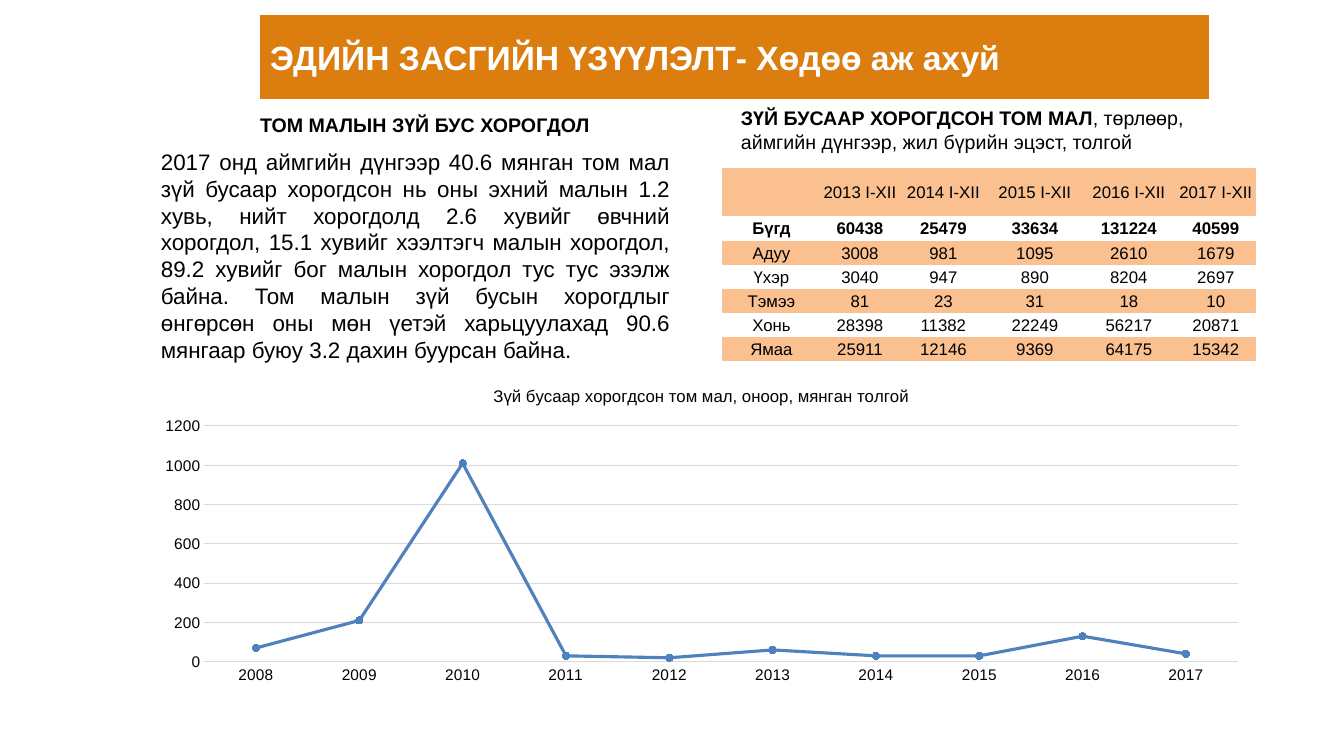
from dataclasses import dataclass

from lxml.etree import SubElement
from pptx import Presentation
from pptx.chart.data import CategoryChartData
from pptx.dml.color import RGBColor
from pptx.enum.chart import XL_CHART_TYPE, XL_MARKER_STYLE, XL_TICK_MARK
from pptx.enum.text import MSO_ANCHOR, MSO_AUTO_SIZE, PP_ALIGN
from pptx.oxml.ns import qn
from pptx.util import Emu, Pt


@dataclass(frozen=True)
class Theme:
    font: str = "Arial"
    text: str = "000000"
    white: str = "FFFFFF"
    banner: str = "DC7D0F"
    band: str = "FAC090"
    line: str = "4F81BD"
    grid: str = "D9D9D9"
    title_size: int = 24
    body_size: int = 16
    heading_size: int = 14
    table_size: int = 12
    axis_size: int = 11


def px(n):
    return Emu(round(n * 914400 / 100.8))


def rgb(value):
    return RGBColor.from_string(value)


class SlideBuilder:
    NO_STYLE = "{2D5ABB26-0587-4C30-8999-92F81FD0307C}"

    def __init__(self, slide, theme):
        self.s = slide
        self.theme = theme

    def style(self, font, size, color=None, bold=False):
        font.name = self.theme.font
        font.size = Pt(size)
        font.bold = bold
        font.color.rgb = rgb(color or self.theme.text)

    def title(self, text, x, y, w, h):
        sp = self.s.shapes.title
        sp.left, sp.top, sp.width, sp.height = map(px, (x, y, w, h))
        sp.fill.solid()
        sp.fill.fore_color.rgb = rgb(self.theme.banner)
        tf = sp.text_frame
        tf.auto_size = MSO_AUTO_SIZE.NONE
        tf.vertical_anchor = MSO_ANCHOR.MIDDLE
        p = tf.paragraphs[0]
        p.text = text
        p.alignment = PP_ALIGN.JUSTIFY
        self.style(p.font, self.theme.title_size, self.theme.white, True)

    def text(self, runs, x, y, w, h, size, align=PP_ALIGN.LEFT):
        tf = self.s.shapes.add_textbox(*map(px, (x, y, w, h))).text_frame
        tf.word_wrap = True
        p = tf.paragraphs[0]
        p.alignment = align
        self.style(p.font, size)
        for words, bold in runs:
            r = p.add_run()
            r.text = words
            if bold:
                r.font.bold = True

    def table(self, rows, x, y, widths, heights, size, align, inset=0,
              bold_rows=(), band_rows=()):
        frame = self.s.shapes.add_table(
            len(rows), len(widths),
            *map(px, (x, y, sum(widths), sum(heights))))
        table = frame.table
        table.first_row = table.horz_banding = False
        table._tbl.tblPr.find(qn("a:tableStyleId")).text = self.NO_STYLE
        for column, width in zip(table.columns, widths):
            column.width = px(width)
        for i, (row, height) in enumerate(zip(rows, heights)):
            table.rows[i].height = px(height)
            for j, value in enumerate(row):
                cell = table.cell(i, j)
                cell.margin_left = cell.margin_right = px(inset)
                cell.margin_top = px(inset)
                cell.margin_bottom = 0
                cell.vertical_anchor = MSO_ANCHOR.MIDDLE
                if i in band_rows:
                    cell.fill.solid()
                    cell.fill.fore_color.rgb = rgb(self.theme.band)
                else:
                    cell.fill.background()
                p = cell.text_frame.paragraphs[0]
                p.text = str(value)
                p.alignment = align
                self.style(p.font, size, bold=i in bold_rows)

    def line_chart(self, name, years, values, x, y, w, h):
        theme = self.theme
        data = CategoryChartData()
        data.categories = years
        data.add_series(name, values)
        chart = self.s.shapes.add_chart(
            XL_CHART_TYPE.LINE_MARKERS, *map(px, (x, y, w, h)), data).chart
        self.style(chart.font, theme.axis_size)
        chart.has_legend = False
        chart.has_title = True
        p = chart.chart_title.text_frame.paragraphs[0]
        p.text = name
        self.style(p.font, theme.table_size)

        for axis in (chart.category_axis, chart.value_axis):
            axis.major_tick_mark = axis.minor_tick_mark = XL_TICK_MARK.NONE
            self.style(axis.tick_labels.font, theme.axis_size)
        value_axis = chart.value_axis
        value_axis.minimum_scale = 0
        value_axis.maximum_scale = 1200
        value_axis.major_unit = 200
        value_axis.format.line.fill.background()
        for line in (chart.category_axis.format.line,
                     value_axis.major_gridlines.format.line):
            line.color.rgb = rgb(theme.grid)
            line.width = Pt(0.75)

        plot = chart.plots[0]
        plot.vary_by_categories = False
        series = plot.series[0]
        series.smooth = False
        series.format.line.color.rgb = rgb(theme.line)
        series.format.line.width = Pt(2.25)
        marker = series.marker
        marker.style = XL_MARKER_STYLE.CIRCLE
        marker.size = 5
        marker.format.fill.solid()
        marker.format.fill.fore_color.rgb = rgb(theme.line)
        marker.format.line.color.rgb = rgb(theme.line)


LOSSES = [
    ["", *(f"{year} I-XII" for year in range(2013, 2018))],
    ["Бүгд", 60438, 25479, 33634, 131224, 40599],
    ["Адуу", 3008, 981, 1095, 2610, 1679],
    ["Үхэр", 3040, 947, 890, 8204, 2697],
    ["Тэмээ", 81, 23, 31, 18, 10],
    ["Хонь", 28398, 11382, 22249, 56217, 20871],
    ["Ямаа", 25911, 12146, 9369, 64175, 15342],
]
SUMMARY = (
    "2017 онд аймгийн дүнгээр 40.6 мянган том мал зүй бусаар хорогдсон нь "
    "оны эхний малын 1.2 хувь, нийт хорогдолд 2.6 хувийг өвчний хорогдол, "
    "15.1 хувийг хээлтэгч малын хорогдол, 89.2 хувийг бог малын хорогдол "
    "тус тус эзэлж байна. Том малын зүй бусын хорогдлыг өнгөрсөн оны мөн "
    "үетэй харьцуулахад 90.6 мянгаар буюу 3.2 дахин буурсан байна."
)


def main():
    prs = Presentation()
    prs.slide_width, prs.slide_height = px(1344), px(756)
    theme = Theme()
    slide = SlideBuilder(prs.slides.add_slide(prs.slide_layouts[5]), theme)

    slide.title("ЭДИЙН ЗАСГИЙН ҮЗҮҮЛЭЛТ- Хөдөө аж ахуй", 260, 15, 949, 84)
    slide.table([["ТОМ МАЛЫН ЗҮЙ БУС ХОРОГДОЛ"]], 260, 109, [345], [33],
                theme.heading_size, PP_ALIGN.LEFT, bold_rows=[0])
    slide.text([("ЗҮЙ БУСААР ХОРОГДСОН ТОМ МАЛ", True),
                (", төрлөөр, аймгийн дүнгээр, жил бүрийн эцэст, толгой", False)],
               731, 101, 529, 57, theme.heading_size)
    slide.table(LOSSES, 722, 168, [99, 78, 89, 94, 94, 80],
                [48, 25] + [24] * 5, theme.table_size, PP_ALIGN.CENTER,
                inset=1, bold_rows=[1], band_rows=range(0, 7, 2))
    slide.line_chart("Зүй бусаар хорогдсон том мал, оноор, мянган толгой",
                     [str(year) for year in range(2008, 2018)],
                     [70, 210, 1010, 30, 20, 60, 30, 30, 130, 40],
                     143, 371, 1117, 319)
    slide.text([(SUMMARY, False)], 151, 143, 529, 228, theme.body_size,
               PP_ALIGN.JUSTIFY)
    prs.save("out.pptx")


if __name__ == "__main__":
    main()
